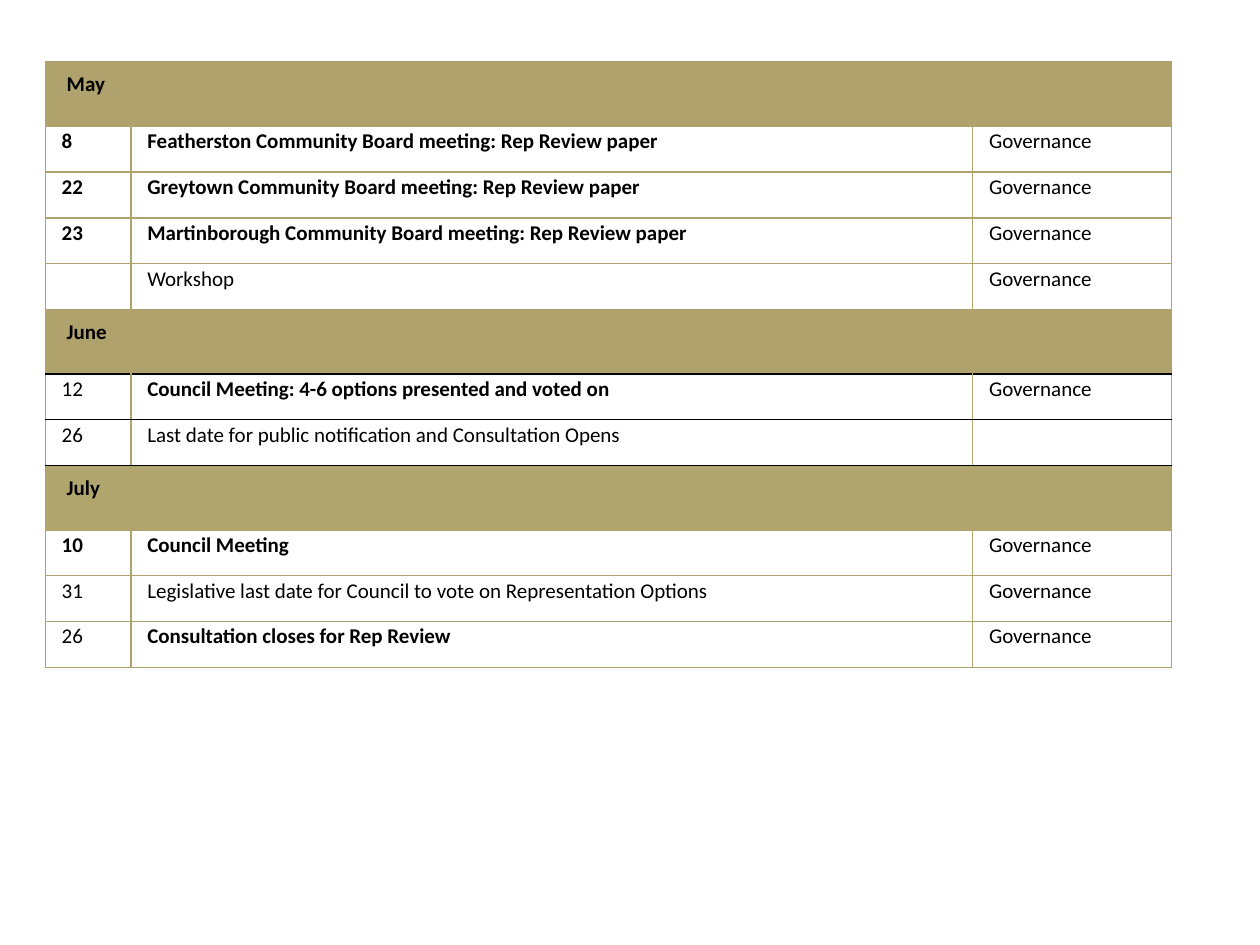
from dataclasses import dataclass
from lxml import etree
from pptx import Presentation
from pptx.dml.color import RGBColor
from pptx.oxml import ns
from pptx.util import Inches, Pt


@dataclass(frozen=True)
class Theme:
    font: str = "Calibri"
    size: float = 12
    line: float = 1
    ink: str = "000000"
    gold: str = "B0A26D"
    olive: str = "B0A66D"


LOOK = Theme()
GOV = "Governance"
PLAN = [
    ("May", LOOK.gold, [
        ("8", True, "Featherston Community Board meeting: Rep Review paper", True, GOV),
        ("22", True, "Greytown Community Board meeting: Rep Review paper", True, GOV),
        ("23", True, "Martinborough Community Board meeting: Rep Review paper", True, GOV),
        ("", False, "Workshop", False, GOV),
    ]),
    ("June", LOOK.gold, [
        ("12", False, "Council Meeting: 4-6 options presented and voted on", True, GOV),
        ("26", False, "Last date for public notification and Consultation Opens", False, ""),
    ]),
    ("July", LOOK.olive, [
        ("10", True, "Council Meeting", True, GOV),
        ("31", False, "Legislative last date for Council to vote on Representation Options", False, GOV),
        ("26", False, "Consultation closes for Rep Review", True, GOV),
    ]),
]
COLS = (0.68, 6.68, 1.58)
HEAD = 0.51
DARK = {6, 7, 8}


def add_node(parent, tag, **attrs):
    return etree.SubElement(parent, ns.qn(tag), **attrs)


def add_fill(parent, color):
    add_node(add_node(parent, "a:solidFill"), "a:srgbClr", val=color)


def set_edges(cell, row):
    props = cell._tc.get_or_add_tcPr()
    top = LOOK.ink if row in DARK else LOOK.gold
    base = LOOK.ink if row + 1 in DARK else LOOK.gold
    for side, color in zip("LRTB", (LOOK.gold, LOOK.gold, top, base)):
        add_fill(add_node(props, f"a:ln{side}", w=str(Pt(LOOK.line))), color)


def set_pad(cell, side, top, base):
    cell.margin_left = cell.margin_right = Inches(side)
    cell.margin_top, cell.margin_bottom = Inches(top), Inches(base)


def write(cell, words, bold, mark=None):
    if not words:
        return
    para = cell.text_frame.paragraphs[0]
    para.space_after = Pt(3)
    tabs = add_node(para._p.get_or_add_pPr(), "a:tabLst")
    add_node(tabs, "a:tab", pos=str(Inches(1.28)), algn="l")
    run = para.add_run()
    run.text = words
    font = run.font
    font.size, font.bold = Pt(LOOK.size), bold
    font.color.rgb = RGBColor.from_string(LOOK.ink)
    if mark:
        light = add_node(run._r.get_or_add_rPr(), "a:highlight")
        add_node(light, "a:srgbClr", val=mark)
    font.name = LOOK.font


def add_month(grid, row, name, color):
    first = grid.cell(row, 0)
    first.merge(grid.cell(row, len(COLS) - 1))
    for col in range(len(COLS)):
        cell = grid.cell(row, col)
        set_edges(cell, row)
        cell.fill.solid()
        cell.fill.fore_color.rgb = RGBColor.from_string(color)
    set_pad(first, 0.17, 0.08, 0.08)
    write(first, name, True, color)


def add_event(grid, row, event):
    day, strong, title, bold, group = event
    for col, (words, heavy) in enumerate(((day, strong), (title, bold), (group, False))):
        cell = grid.cell(row, col)
        set_edges(cell, row)
        cell.fill.background()
        set_pad(cell, 0.13, 0.02, 0)
        write(cell, words, heavy)


def add_plan(slide, left, top, width, height):
    events = sum(len(items) for _, _, items in PLAN)
    count = events + len(PLAN)
    grid = slide.shapes.add_table(
        count, len(COLS), Inches(left), Inches(top), Inches(width), Inches(height)
    ).table
    grid.first_row = grid.horz_banding = False
    for col, size in zip(grid.columns, COLS):
        col.width = Inches(width * size / sum(COLS))
    for row in grid.rows:
        row.height = Inches((height - HEAD * len(PLAN)) / events)
    row = 0
    for name, color, items in PLAN:
        grid.rows[row].height = Inches(HEAD)
        add_month(grid, row, name, color)
        for step, event in enumerate(items, 1):
            add_event(grid, row + step, event)
        row += len(items) + 1


def main():
    deck = Presentation()
    deck.slide_width, deck.slide_height = Inches(10), Inches(7.5)
    slide = deck.slides.add_slide(deck.slide_layouts[6])
    add_plan(slide, 0.36, 0.49, 8.94, 4.81)
    deck.save("out.pptx")


if __name__ == "__main__":
    main()
